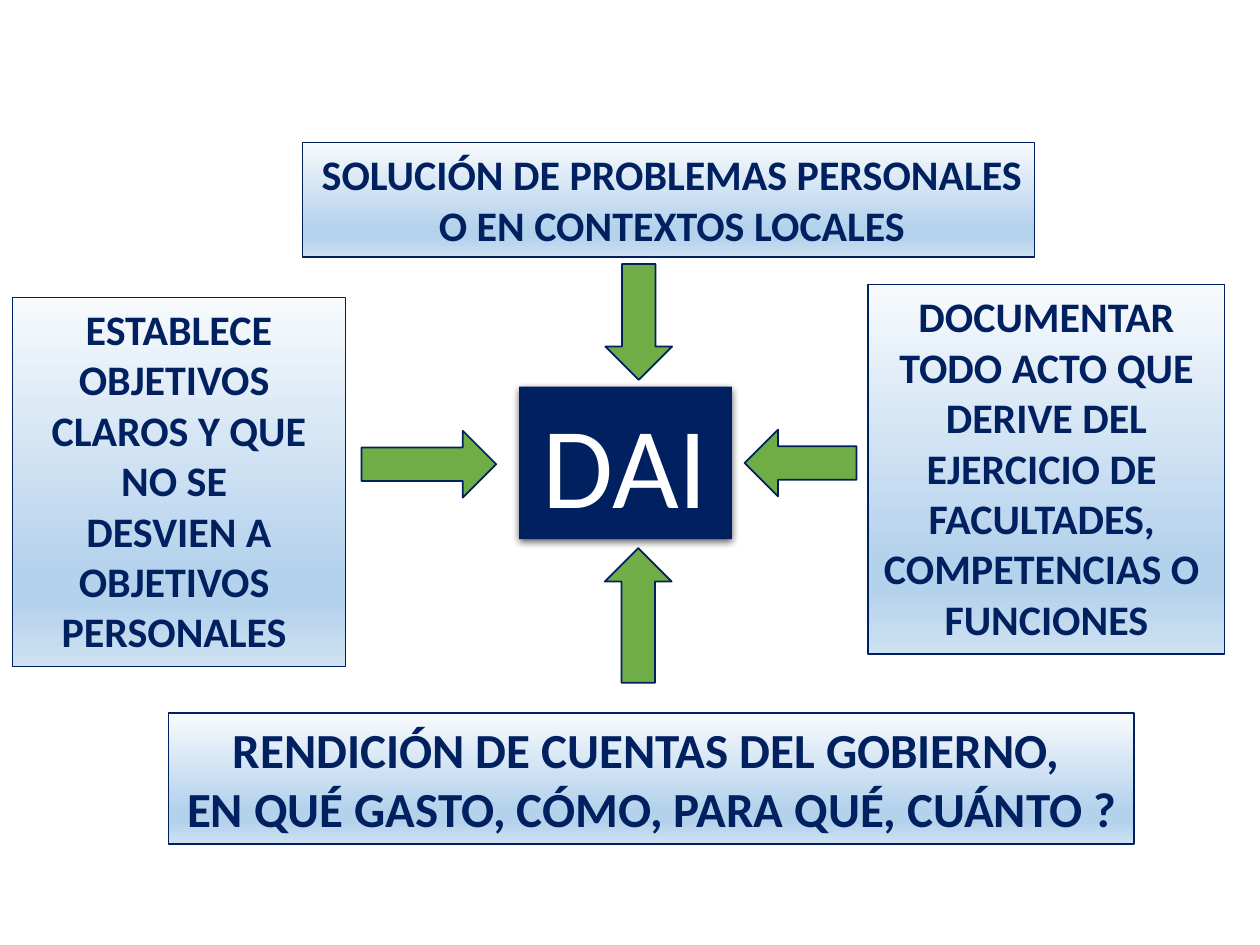
from lxml import etree
from pptx import Presentation
from pptx.dml.color import RGBColor
from pptx.enum import shapes, text
from pptx.oxml import ns
from pptx.util import Pt

COLORS = {"navy": "002060", "green": "70AD47", "white": "FFFFFF", "black": "000000",
          "pale": "F7FAFD", "sky": "B5D2EC", "mist": "CEE1F2"}
GRADIENT = [(0, "pale"), (74, "sky"), (83, "sky"), (100, "mist")]
CENTER, RIGHT = text.PP_ALIGN.CENTER, text.PP_ALIGN.RIGHT

deck = Presentation()
deck.slide_width, deck.slide_height = Pt(720), Pt(540)
page = deck.slides.add_slide(deck.slide_layouts[6])


def add_block(kind, place, fill, line=None):
    block = page.shapes.add_shape(kind, *[Pt(length) for length in place])
    block.shadow.inherit = False
    block.fill.solid()
    block.fill.fore_color.rgb = RGBColor.from_string(COLORS[fill])
    if line:
        block.line.color.rgb = RGBColor.from_string(COLORS["navy"])
        block.line.width = Pt(line)
    else:
        block.line.fill.background()
    return block


def write(box, lines, size=24, color="navy", bold=True, wrap=True, first_align=CENTER):
    frame = box.text_frame
    frame.word_wrap = wrap
    frame.auto_size = text.MSO_AUTO_SIZE.SHAPE_TO_FIT_TEXT
    frame.vertical_anchor = text.MSO_ANCHOR.TOP
    for index, line in enumerate(lines):
        para = frame.paragraphs[0] if index == 0 else frame.add_paragraph()
        para.alignment = CENTER if index else first_align
        span = para.add_run()
        span.text = line
        span.font.name, span.font.size, span.font.bold = "Calibri", Pt(size), bold
        span.font.color.rgb = RGBColor.from_string(COLORS[color])


# Central block with a soft shadow below
center = add_block(shapes.MSO_SHAPE.RECTANGLE, (296.6, 221, 121.7, 87.1), "navy")
write(center, ["DAI"], size=66, color="white", bold=False)
effects = center._element.spPr.find(ns.qn("a:effectLst"))
shadow = etree.SubElement(effects, ns.qn("a:outerShdw"), blurRad=str(Pt(4.5)),
                          dist=str(Pt(1.5)), dir="5400000", algn="ctr", rotWithShape="0")
shade = etree.SubElement(shadow, ns.qn("a:srgbClr"), val=COLORS["black"])
etree.SubElement(shade, ns.qn("a:alpha"), val="63000")

# Arrows pointing at the centre: left, top, length, rotation
for left, top, length, rotation in [(206.6, 246.2, 77, 0), (326.2, 332.6, 77, 270),
                                    (425.5, 245.5, 64, 180), (331.9, 164.9, 66.2, 90)]:
    arrow = add_block(shapes.MSO_SHAPE.RIGHT_ARROW, (left, top, length, 38.2), "green", line=1)
    arrow.rotation = rotation

# Gradient boxes around the centre
boxes = [
    ((7.2, 169.9, 190.1, 211),
     ["ESTABLECE OBJETIVOS ", "CLAROS Y QUE NO SE ", "DESVIEN A OBJETIVOS ", "PERSONALES "], {}),
    ((172.8, 81.4, 418.3, 65.5),
     ["SOLUCIÓN DE PROBLEMAS PERSONALES", "O EN CONTEXTOS LOCALES"],
     {"wrap": False, "first_align": RIGHT}),
    ((96.5, 407.5, 551.5, 74.9),
     ["RENDICIÓN DE CUENTAS DEL GOBIERNO, ", "EN QUÉ GASTO, CÓMO, PARA QUÉ, CUÁNTO ?"],
     {"wrap": False, "size": 28}),
    ((496.1, 162.7, 203.8, 211),
     ["DOCUMENTAR TODO ACTO QUE DERIVE DEL EJERCICIO DE ", "FACULTADES, ",
      "COMPETENCIAS O ", "FUNCIONES"], {}),
]
for place, lines, options in boxes:
    box = add_block(shapes.MSO_SHAPE.RECTANGLE, place, "sky", line=0.75)
    write(box, lines, **options)
    box.fill.gradient()
    box.fill.gradient_angle = 270
    stops = box._element.spPr.find(ns.qn("a:gradFill")).find(ns.qn("a:gsLst"))
    for stop in list(stops):
        stops.remove(stop)
    for position, color in GRADIENT:
        stop = etree.SubElement(stops, ns.qn("a:gs"), pos=str(position * 1000))
        etree.SubElement(stop, ns.qn("a:srgbClr"), val=COLORS[color])

deck.save("out.pptx")
